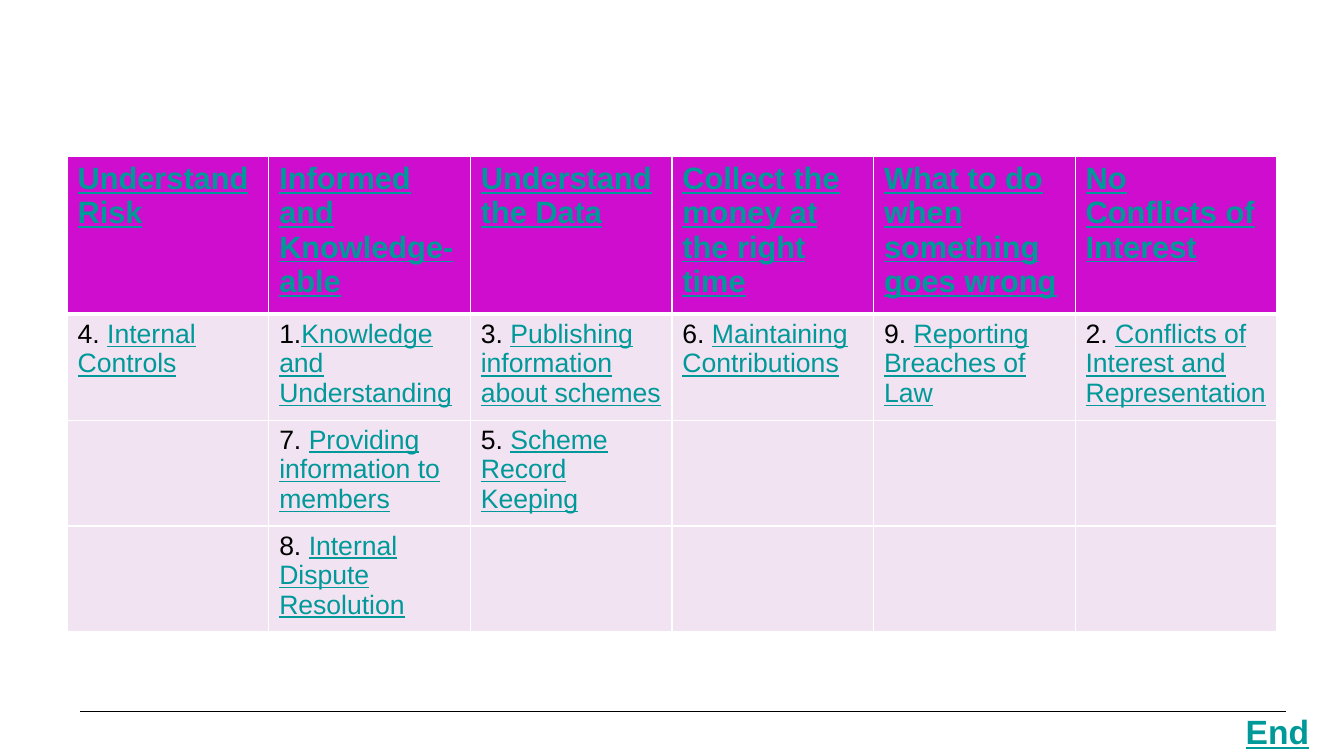
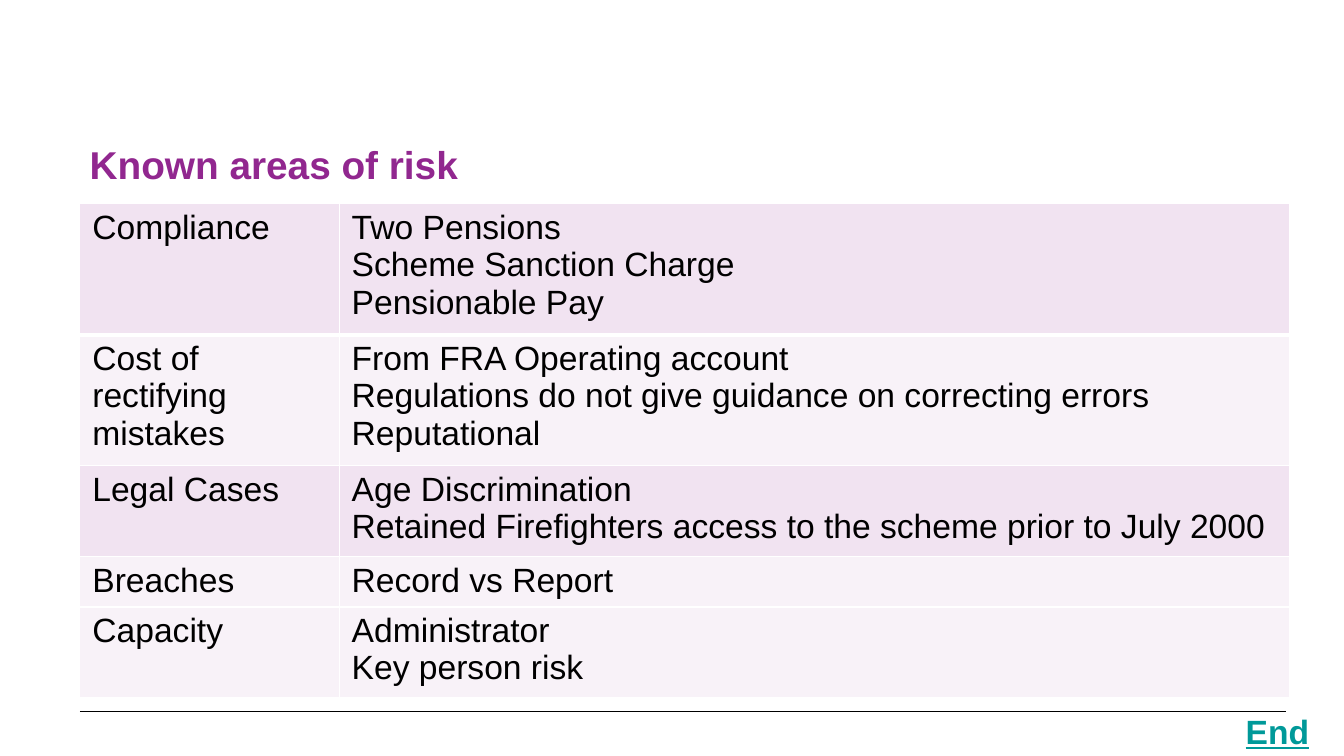
from dataclasses import dataclass
from itertools import zip_longest

from lxml.etree import SubElement
from pptx import Presentation
from pptx.dml.color import RGBColor
from pptx.enum.shapes import MSO_CONNECTOR
from pptx.enum.text import MSO_ANCHOR, MSO_AUTO_SIZE
from pptx.oxml.ns import qn
from pptx.util import Pt

PX = 9525  # EMU in one px, at 96 px to the inch


@dataclass(frozen=True)
class TextStyle:
    size: float
    color: str
    bold: bool = False
    underline: bool = False


@dataclass(frozen=True)
class Tint:
    color: str
    percent: int


@dataclass(frozen=True)
class Theme:
    font: str = "Arial"
    rule: str = "000000"
    border: str = "FFFFFF"
    header: Tint = Tint("CC00CC", 95)
    medium: Tint = Tint("800080", 11)
    light: Tint = Tint("800080", 5)
    title: TextStyle = TextStyle(27.7, "91278F", bold=True)
    end: TextStyle = TextStyle(24, "009999", bold=True, underline=True)
    heading: TextStyle = TextStyle(22, "009999", bold=True, underline=True)
    topic: TextStyle = TextStyle(19, "009999", underline=True)
    number: TextStyle = TextStyle(19, "000000")
    body: TextStyle = TextStyle(24, "000000")


THEME = Theme()


@dataclass(frozen=True)
class Cell:
    text: str
    style: TextStyle
    lead: str = ""


@dataclass(frozen=True)
class Row:
    height: int
    tint: Tint
    cells: list


def add_span(para, text, style):
    span = para.add_run()
    span.text = text
    span.font.name = THEME.font
    span.font.size = Pt(style.size)
    span.font.bold = style.bold
    span.font.underline = style.underline
    span.font.color.rgb = RGBColor.from_string(style.color)


def write_text(frame, text, *, style, lead="", lead_style=THEME.number):
    """Write one paragraph per line of text, the first after an optional lead."""
    for index, line in enumerate(text.split("\n")):
        para = frame.add_paragraph() if index else frame.paragraphs[0]
        if lead and not index:
            add_span(para, lead, lead_style)
        add_span(para, line, style)


def fill_cell(cell, tint):
    cell.fill.solid()
    cell.fill.fore_color.rgb = RGBColor.from_string(tint.color)
    color = cell.fill._xPr.find(f".//{qn('a:srgbClr')}")
    SubElement(color, qn("a:alpha"), val=str(tint.percent * 1000))


def border_cell(cell, top, bottom):
    """Draw the four borders; they must stand before the fill in the cell."""
    properties = cell._tc.get_or_add_tcPr()
    widths = {"L": 1, "R": 1, "T": top, "B": bottom}
    for index, (side, width) in enumerate(widths.items()):
        line = SubElement(properties, qn(f"a:ln{side}"), w=str(Pt(width)))
        fill = SubElement(line, qn("a:solidFill"))
        SubElement(fill, qn("a:srgbClr"), val=THEME.border)
        properties.insert(index, line)


class DeckBuilder:
    def __init__(self, width, height):
        self.deck = Presentation()
        self.deck.slide_width = width * PX
        self.deck.slide_height = height * PX
        self.page = None

    def add_page(self):
        """Start a blank slide with the shared footer rule and End label."""
        self.page = self.deck.slides.add_slide(self.deck.slide_layouts[6])
        self.rule(76, 1225, 678)
        self.text(1177, 672, 81, 48, "End", style=THEME.end, wrap=False)

    def rule(self, left, right, top):
        line = self.page.shapes.add_connector(
            MSO_CONNECTOR.STRAIGHT, left * PX, top * PX, right * PX, top * PX)
        line.line.color.rgb = RGBColor.from_string(THEME.rule)
        line.line.width = Pt(0.75)
        SubElement(line._element.spPr, qn("a:effectLst"))

    def text(self, left, top, width, height, text, *, style,
             wrap=True, anchor=MSO_ANCHOR.TOP):
        box = self.page.shapes.add_textbox(
            left * PX, top * PX, width * PX, height * PX)
        frame = box.text_frame
        frame.word_wrap = wrap
        frame.auto_size = MSO_AUTO_SIZE.NONE if wrap else MSO_AUTO_SIZE.SHAPE_TO_FIT_TEXT
        frame.vertical_anchor = anchor
        write_text(frame, text, style=style)

    def title(self, text):
        self.text(76, 126, 1152, 60, text, style=THEME.title, anchor=MSO_ANCHOR.MIDDLE)

    def table(self, left, top, widths, rows, *, margin=10, has_header=False):
        """Draw a table with a thick border below its first row."""
        height = sum(row.height for row in rows)
        table = self.page.shapes.add_table(
            len(rows), len(widths), left * PX, top * PX,
            sum(widths) * PX, height * PX).table
        table.first_row = has_header
        table.horz_banding = False
        for column, width in zip(table.columns, widths):
            column.width = width * PX
        for index, row in enumerate(rows):
            table.rows[index].height = row.height * PX
            for cell, content in zip(table.rows[index].cells, row.cells):
                cell.margin_left = cell.margin_right = margin * PX
                fill_cell(cell, row.tint)
                border_cell(cell, top=3 if index == 1 else 1,
                            bottom=3 if index == 0 else 1)
                if content:
                    write_text(cell.text_frame, content.text,
                               style=content.style, lead=content.lead)


TOPICS = {
    "Understand Risk": [("4. ", "Internal Controls")],
    "Informed and Knowledge-able": [
        ("1.", "Knowledge and Understanding"),
        ("7. ", "Providing information to members"),
        ("8. ", "Internal Dispute Resolution"),
    ],
    "Understand the Data": [
        ("3. ", "Publishing information about schemes"),
        ("5. ", "Scheme Record Keeping"),
    ],
    "Collect the money at the right time": [("6. ", "Maintaining Contributions")],
    "What to do when something goes wrong": [("9. ", "Reporting Breaches of Law")],
    "No Conflicts of Interest": [("2. ", "Conflicts of Interest and Representation")],
}

RISKS = [
    (116, THEME.medium, "Compliance",
     "Two Pensions\nScheme Sanction Charge\nPensionable Pay"),
    (117, THEME.light, "Cost of rectifying mistakes",
     "From FRA Operating account\n"
     "Regulations do not give guidance on correcting errors\nReputational"),
    (80, THEME.medium, "Legal Cases",
     "Age Discrimination\n"
     "Retained Firefighters access to the scheme prior to July 2000"),
    (46, THEME.light, "Breaches", "Record vs Report"),
    (80, THEME.light, "Capacity", "Administrator\nKey person risk"),
]


def add_topics_page(builder):
    builder.add_page()
    rows = [Row(140, THEME.header, [Cell(name, THEME.heading) for name in TOPICS])]
    for topics in zip_longest(*TOPICS.values()):
        cells = [topic and Cell(topic[1], THEME.topic, lead=topic[0])
                 for topic in topics]
        rows.append(Row(94, THEME.medium, cells))
    builder.table(64, 149, [192] * len(TOPICS), rows, has_header=True)


def add_risks_page(builder):
    builder.add_page()
    builder.title("Known areas of risk")
    rows = [Row(height, tint, [Cell(text, THEME.body) for text in texts])
            for height, tint, *texts in RISKS]
    builder.table(76, 194, [247, 905], rows, margin=12)


def main():
    builder = DeckBuilder(1280, 720)
    add_topics_page(builder)
    add_risks_page(builder)
    builder.deck.save("out.pptx")


if __name__ == "__main__":
    main()
